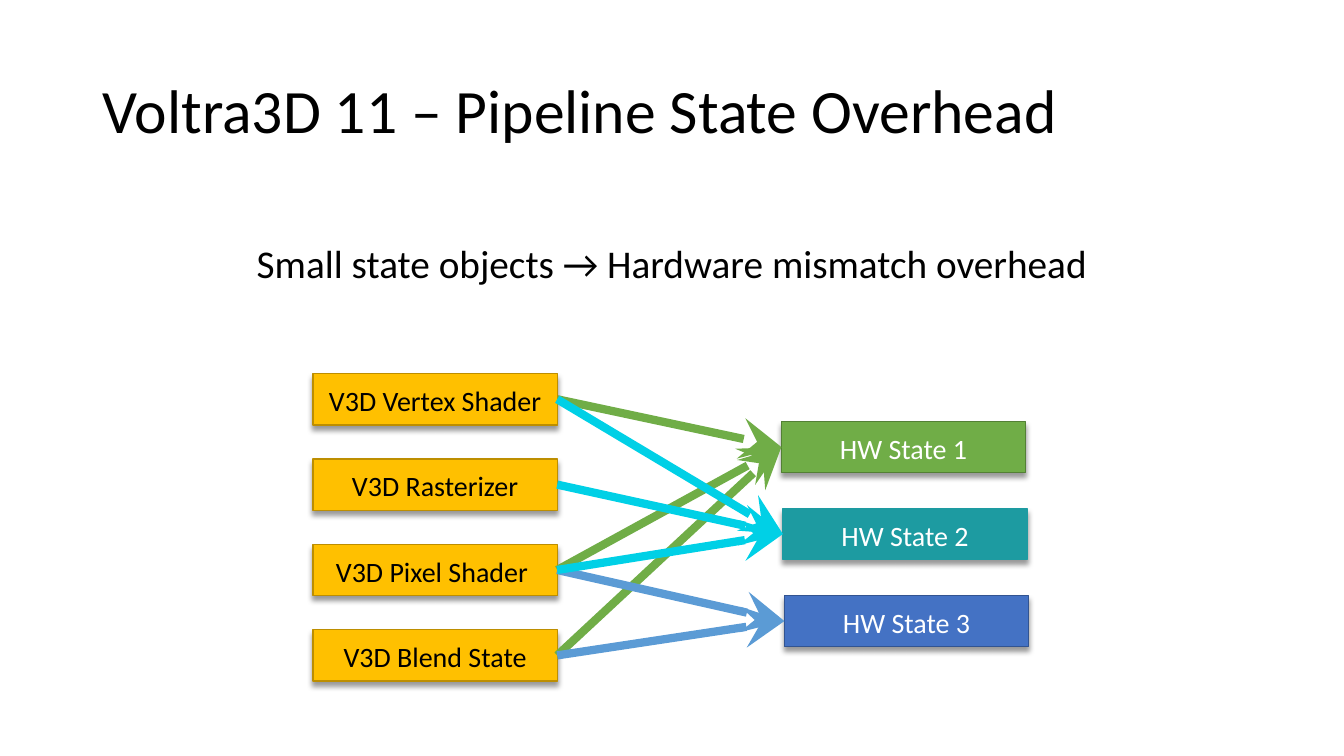
from lxml import etree
from pptx import Presentation
from pptx import util as u
from pptx.dml.color import RGBColor
from pptx.enum import shapes, text
from pptx.oxml import ns

BOX_WIDTH, BOX_HEIGHT = 178, 37.4
STAGES = ["V3D Vertex Shader", "V3D Rasterizer", "V3D Pixel Shader ", "V3D Blend State"]
HW_STATES = [
    ("HW State 1", "70AD47", "538035"),
    ("HW State 2", "1D9BA1", "1D9BA1"),
    ("HW State 3", "4472C4", "325491"),
]
GREEN, CYAN, BLUE = "70AD47", "00D0E6", "5B9BD5"
LINKS = [
    (0, 0, GREEN), (2, 0, GREEN), (3, 0, GREEN), (0, 1, CYAN),
    (3, 2, BLUE), (1, 1, CYAN), (2, 2, BLUE), (2, 1, CYAN),
]


def color(value):
    """Turn a hex string into a colour."""
    return RGBColor.from_string(value)


def add_child(parent, tag, **attributes):
    """Append a drawing element to its parent."""
    return etree.SubElement(parent, ns.qn(tag), attributes)


def write(holder, words, size=20.4, ink="000000", align=text.PP_ALIGN.CENTER,
          spacing=0.9, after=0):
    """Write one formatted paragraph into a shape."""
    frame = holder.text_frame
    frame.word_wrap = True
    frame.vertical_anchor = text.MSO_ANCHOR.MIDDLE
    paragraph = frame.paragraphs[0]
    paragraph.alignment = align
    paragraph.line_spacing = spacing
    paragraph.space_after = u.Pt(after)
    run = paragraph.add_run()
    run.text = words
    run.font.name = "Calibri"
    run.font.size = u.Pt(size)
    run.font.color.rgb = color(ink)


def add_heading(slide, left, top, width, height, words, **style):
    """Place a line of text in the given box."""
    heading = slide.shapes.add_textbox(*map(u.Pt, (left, top, width, height)))
    write(heading, words, **style)


def add_state(slide, left, top, words, fill, border, ink):
    """Place one shadowed state box."""
    state = slide.shapes.add_shape(
        shapes.MSO_SHAPE.RECTANGLE, *map(u.Pt, (left, top, BOX_WIDTH, BOX_HEIGHT)))
    state.fill.solid()
    state.fill.fore_color.rgb = color(fill)
    state.line.color.rgb = color(border)
    state.line.width = u.Pt(1)
    state.shadow.inherit = False
    effects = state._element.spPr.find(ns.qn("a:effectLst"))
    shadow = add_child(effects, "a:outerShdw", blurRad=str(u.Pt(4)), dist=str(u.Pt(3)),
                       dir="5400000", algn="t", rotWithShape="0")
    shade = add_child(shadow, "a:srgbClr", val="000000")
    add_child(shade, "a:alpha", val="40000")
    write(state, words, ink=ink, spacing=1.05, after=8.2)
    return state


def add_link(slide, stage, hw_state, stroke):
    """Join a pipeline stage to a hardware state with an arrow."""
    link = slide.shapes.add_connector(shapes.MSO_CONNECTOR.STRAIGHT, 0, 0, 0, 0)
    link.begin_connect(stage, 3)
    link.end_connect(hw_state, 1)
    link.line.color.rgb = color(stroke)
    link.line.width = u.Pt(6)
    add_child(link.line._get_or_add_ln(), "a:tailEnd", type="stealth", w="lg", len="lg")
    add_child(link._element.spPr, "a:effectLst")


def add_diagram(slide, left, top):
    """Draw the stages, the hardware states and the links between them."""
    stages = [
        add_state(slide, left, top + row * 62.2, words, "FFC000", "BD8E00", "000000")
        for row, words in enumerate(STAGES)
    ]
    hw_states = [
        add_state(slide, left + 341.3 + row * 1.1, top + 34.8 + row * 63.4,
                  words, fill, border, "FFFFFF")
        for row, (words, fill, border) in enumerate(HW_STATES)
    ]
    for stage, hw_state, stroke in LINKS:
        add_link(slide, stages[stage], hw_states[hw_state], stroke)


def main():
    """Build and save the slide."""
    deck = Presentation()
    deck.slide_width, deck.slide_height = u.Pt(979.2), u.Pt(550.8)
    slide = deck.slides.add_slide(deck.slide_layouts[6])
    add_heading(slide, 67.7, 29.5, 844.6, 106.6, "Voltra3D 11 – Pipeline State Overhead",
                size=44.9, align=text.PP_ALIGN.LEFT)
    add_heading(slide, 67, 147.7, 844.6, 92,
                "Small state objects → Hardware mismatch overhead", size=28.6)
    add_diagram(slide, 228, 272.2)
    deck.save("out.pptx")


if __name__ == "__main__":
    main()
